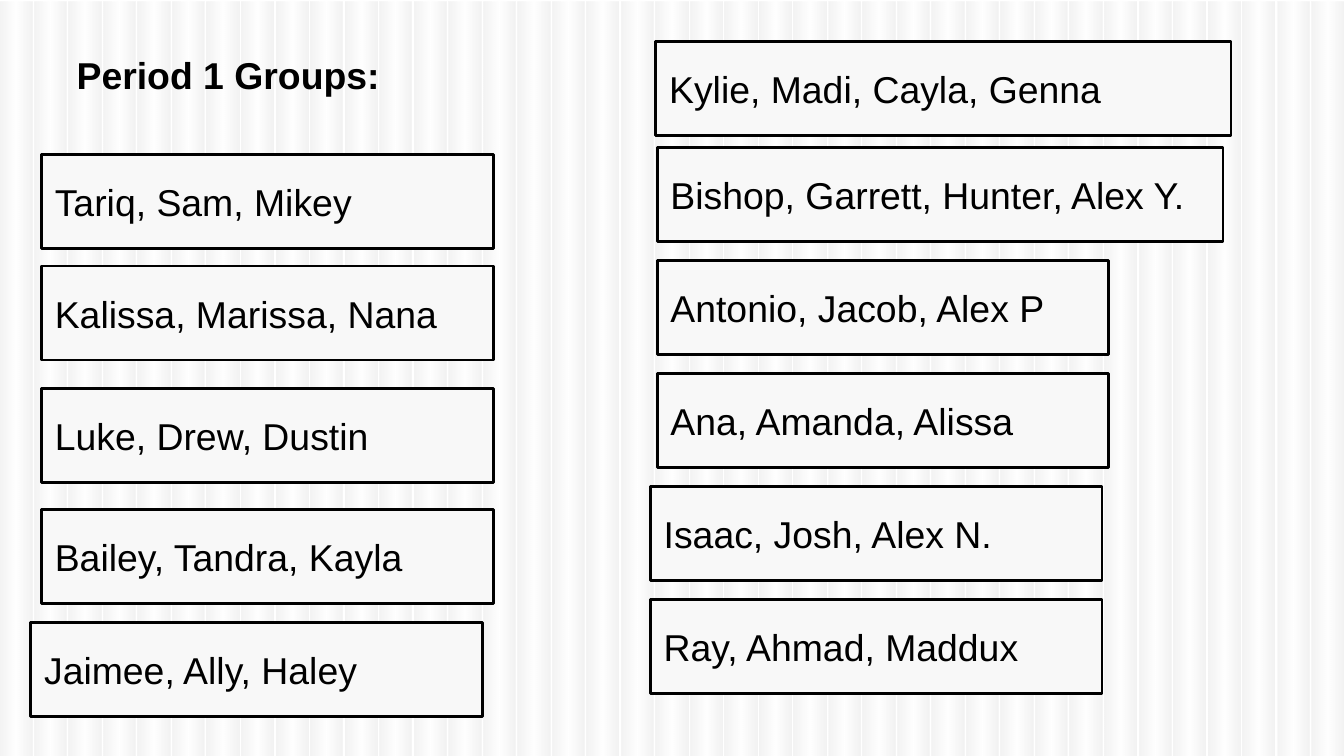
from lxml import etree
from pptx import Presentation
from pptx import util as u
from pptx.dml.color import RGBColor
from pptx.enum import shapes, text
from pptx.oxml.ns import qn

SLIDE_W = 10
SLIDE_H = SLIDE_W * 9 / 16
BLACK = RGBColor(0x00, 0x00, 0x00)
WHITE = RGBColor(0xFF, 0xFF, 0xFF)
CARD_GREY = RGBColor(0xF8, 0xF8, 0xF8)
STRIPE_GREY = RGBColor(0xBF, 0xBF, 0xBF)

STRIPE_COUNT, STRIPE_W, STRIPE_TOP = 39, 0.24, 0.01
STRIPE_PITCH = (SLIDE_W - STRIPE_W) / (STRIPE_COUNT - 1)
STRIPE_STOPS = [(0, STRIPE_GREY), (50, WHITE), (97, STRIPE_GREY), (100, STRIPE_GREY)]
STRIPE_OPACITY = 19

CARD_W, CARD_H = 3.36, 0.7
LEFT_X, RIGHT_X = 0.31, 4.89
RIGHT_TOP, RIGHT_STEP = 1.1, 0.84

LEFT_GROUPS = [  # left, top, members
    (LEFT_X, 1.15, "Tariq, Sam, Mikey"),
    (LEFT_X, 1.98, "Kalissa, Marissa, Nana"),
    (LEFT_X, 2.89, "Luke, Drew, Dustin"),
    (LEFT_X, 3.79, "Bailey, Tandra, Kayla"),
    (0.23, 4.63, "Jaimee, Ally, Haley"),
]
RIGHT_GROUPS = [  # left, width, members
    (RIGHT_X, 4.21, "Bishop, Garrett, Hunter, Alex Y."),
    (RIGHT_X, CARD_W, "Antonio, Jacob, Alex P"),
    (RIGHT_X, CARD_W, "Ana, Amanda, Alissa"),
    (4.84, CARD_W, "Isaac, Josh, Alex N."),
    (4.84, CARD_W, "Ray, Ahmad, Maddux"),
]


def inches(*lengths):
    return [u.Inches(length) for length in lengths]


def add_rectangle(slide, left, top, width, height):
    rectangle = slide.shapes.add_shape(
        shapes.MSO_SHAPE.RECTANGLE, *inches(left, top, width, height))
    rectangle.shadow.inherit = False
    return rectangle


def fill_with_sheen(stripe):
    """Give a stripe its translucent grey-white-grey gradient."""
    stripe.fill.gradient()
    stripe.fill.gradient_angle = 0
    stops = stripe.element.spPr.find(qn("a:gradFill")).find(qn("a:gsLst"))
    for old_stop in list(stops):
        stops.remove(old_stop)
    for position, color in STRIPE_STOPS:
        stop = etree.SubElement(stops, qn("a:gs"), pos=str(position * 1000))
        tint = etree.SubElement(stop, qn("a:srgbClr"), val=str(color))
        etree.SubElement(tint, qn("a:alpha"), val=str(STRIPE_OPACITY * 1000))


def add_stripes(slide):
    for column in range(STRIPE_COUNT):
        stripe = add_rectangle(
            slide, column * STRIPE_PITCH, STRIPE_TOP, STRIPE_W, SLIDE_H)
        stripe.line.fill.background()
        fill_with_sheen(stripe)


def write(shape, words, anchor, bold=False):
    frame = shape.text_frame
    frame.word_wrap = True
    frame.auto_size = text.MSO_AUTO_SIZE.NONE
    frame.vertical_anchor = anchor
    frame.margin_left = frame.margin_right = u.Inches(0.1)
    frame.margin_top = frame.margin_bottom = u.Inches(0.1)
    paragraph = frame.paragraphs[0]
    paragraph.alignment = text.PP_ALIGN.LEFT
    run = paragraph.add_run()
    run.text = words
    run.font.name = "Arial"
    run.font.size = u.Pt(20)
    run.font.bold = bold
    run.font.color.rgb = BLACK


def add_group_card(slide, left, top, members, width=CARD_W):
    card = add_rectangle(slide, left, top, width, CARD_H)
    card.fill.solid()
    card.fill.fore_color.rgb = CARD_GREY
    card.line.color.rgb = BLACK
    card.line.width = u.Pt(1.5)
    write(card, members, text.MSO_ANCHOR.MIDDLE)


def place_title(slide, words):
    """Fill the title placeholder and bring it in front of the stripes."""
    title = slide.shapes.title
    title.left, title.top, title.width, title.height = inches(0.47, 0.29, 3.74, 0.57)
    write(title, words, text.MSO_ANCHOR.TOP, bold=True)
    title.element.getparent().append(title.element)


def main():
    deck = Presentation()
    deck.slide_width, deck.slide_height = inches(SLIDE_W, SLIDE_H)
    slide = deck.slides.add_slide(deck.slide_layouts[5])
    slide.background.fill.solid()
    slide.background.fill.fore_color.rgb = WHITE

    add_stripes(slide)
    for left, top, members in LEFT_GROUPS:
        add_group_card(slide, left, top, members)
    add_group_card(slide, 4.88, 0.31, "Kylie, Madi, Cayla, Genna", 4.28)
    for row, (left, width, members) in enumerate(RIGHT_GROUPS):
        add_group_card(slide, left, RIGHT_TOP + row * RIGHT_STEP, members, width)
    place_title(slide, "Period 1 Groups:")

    deck.save("out.pptx")


if __name__ == "__main__":
    main()
